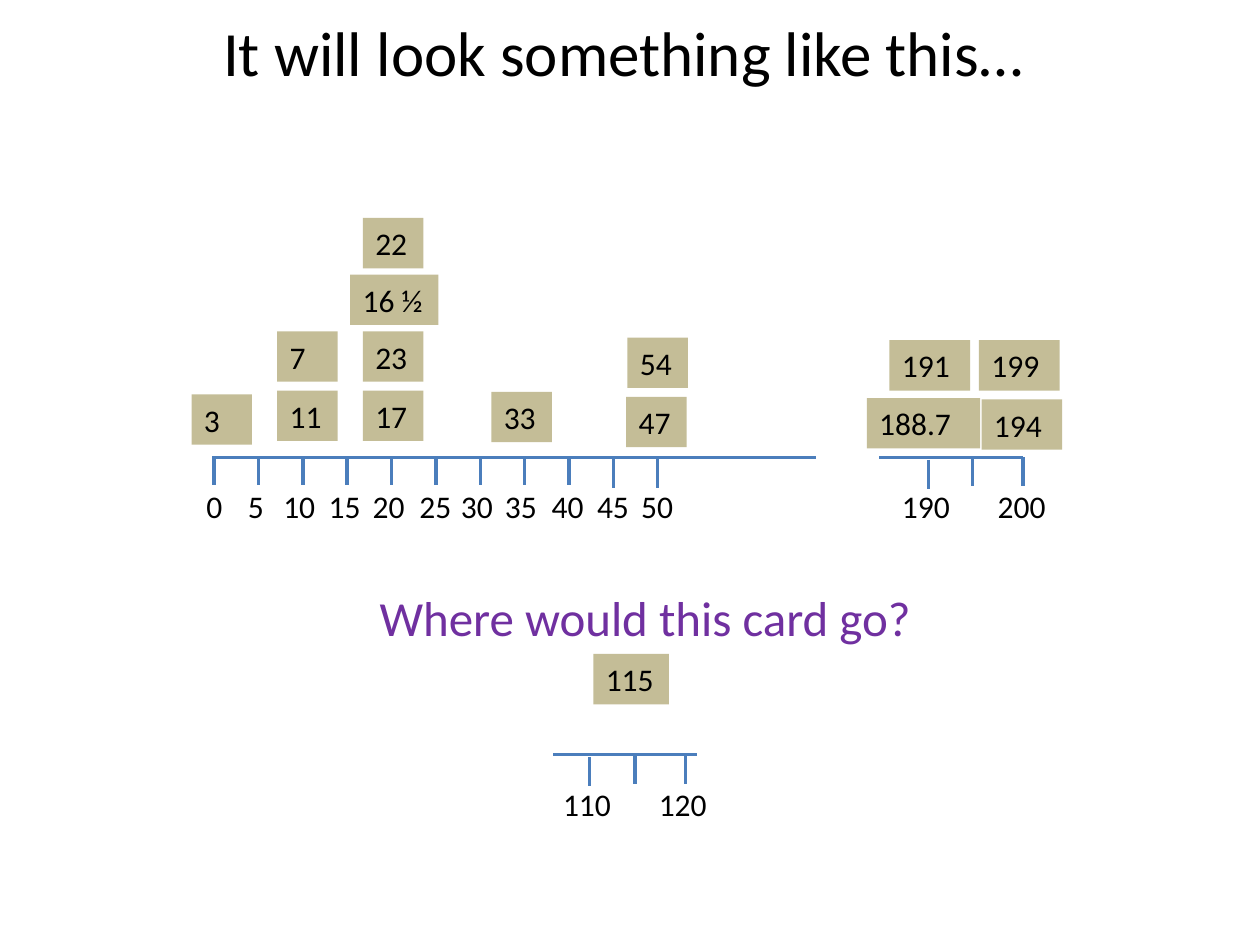
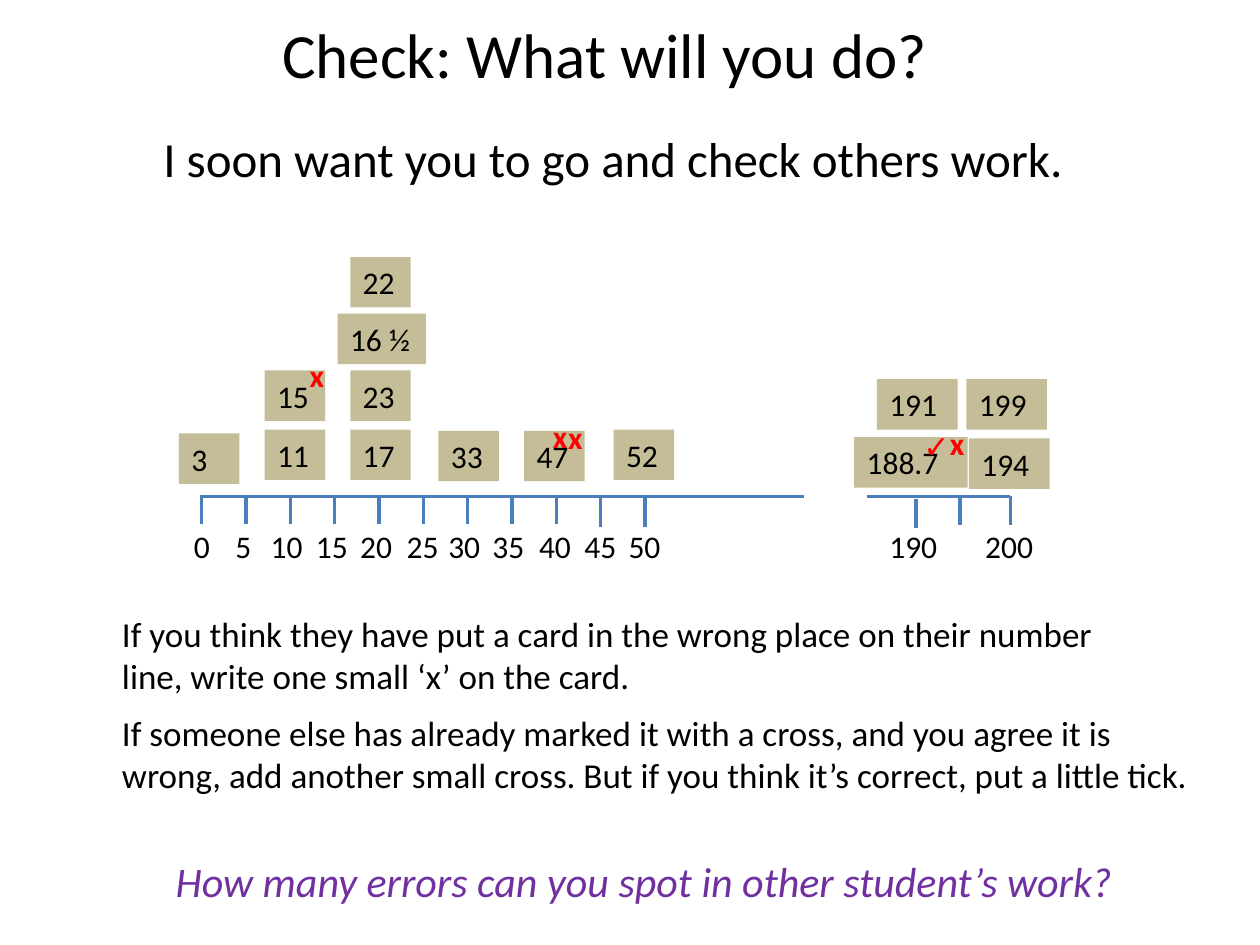
from lxml import etree
from pptx import Presentation
from pptx.dml.color import RGBColor
from pptx.enum.shapes import MSO_CONNECTOR, MSO_SHAPE
from pptx.enum.text import MSO_ANCHOR, MSO_AUTO_SIZE, PP_ALIGN
from pptx.oxml.ns import qn
from pptx.util import Inches, Pt

RECT = MSO_SHAPE.RECTANGLE
STRAIGHT = MSO_CONNECTOR.STRAIGHT
TOP = MSO_ANCHOR.TOP
GROW = MSO_AUTO_SIZE.SHAPE_TO_FIT_TEXT
LEFT, MID = PP_ALIGN.LEFT, PP_ALIGN.CENTER

BLACK, PURPLE, RED = "000000", "7030A0", "FF0000"
TAN, BLUE = "C4BD97", "4B7EBC"
ROW = 0.4  # height of a card or a label


def put(shape, text, at, size=18, color=BLACK, wrap=False, align=LEFT, **more):
    """Place a shape and write its text."""
    for side, val in zip(("left", "top", "width", "height"), at):
        setattr(shape, side, Inches(val))
    frame = shape.text_frame
    look = {"word_wrap": wrap, "auto_size": GROW, "vertical_anchor": TOP}
    for key, val in look.items():
        setattr(frame, key, val)
    para = frame.paragraphs[0]
    para.alignment = align
    run = para.add_run()
    run.text = text
    style = {"name": "Calibri", "size": Pt(size), **more}
    for key, val in style.items():
        setattr(run.font, key, val)
    run.font.color.rgb = RGBColor.from_string(color)


def rule(shapes, x1, y1, x2, y2):
    """Draw one plain blue line."""
    ends = [Inches(n) for n in (x1, y1, x2, y2)]
    line = shapes.add_connector(STRAIGHT, *ends)
    line.line.color.rgb = RGBColor.from_string(BLUE)
    line.line.width = Pt(2)
    etree.SubElement(line._element.spPr, qn("a:effectLst"))


# Cards on both slides: text, left, top, width
shared = [
    ("17", 2.88, 3.1, 0.48), ("23", 2.88, 2.63, 0.48),
    ("11", 2.2, 3.1, 0.48), ("3", 1.52, 3.13, 0.48),
    ("16 ½", 2.78, 2.18, 0.7), ("22", 2.88, 1.73, 0.48),
    ("188.7", 6.88, 3.16, 0.9), ("191", 7.06, 2.7, 0.64),
    ("194", 7.79, 3.17, 0.64), ("199", 7.77, 2.7, 0.64),
]

# Long number line: ticks at equal gaps, labels set by hand
ticks = [(1.7 + 3.52 * i / 10, 0.01 if i > 8 else -0.01) for i in range(11)]
spots = [1.54, 1.87, 2.15, 2.51, 2.86, 3.23, 3.56, 3.91, 4.28, 4.64, 4.99]
marks = [(str(5 * i), x, 0.33 if i < 2 else 0.46) for i, x in enumerate(spots)]
long = (1.69, 6.48, 3.63, ticks, marks)

# Short number lines
high = (6.98, 8.12, 3.63, [(8.12, 0), (7.72, 0), (7.37, 0.02)],
        [("200", 7.82, 0.59), ("190", 7.06, 0.59)])
gap = (4.39, 5.53, 5.99, [(5.44, 0), (5.04, 0), (4.68, 0.02)],
       [("120", 5.13, 0.59), ("110", 4.37, 0.59)])

# Each slide: title and its place, shift of the chart, own cards, number lines
pages = [
    ("It will look something like this…", (1.67, 0.06, 6.61, 0.71), 0, 0,
     [("33", 3.9, 3.11, 0.48), ("47", 4.97, 3.15, 0.48),
      ("7", 2.2, 2.63, 0.48), ("54", 4.98, 2.68, 0.48),
      ("115", 4.71, 5.19, 0.6)], [high, long, gap]),
    ("Check: What will you do?", (2.14, 0.07, 5.37, 0.71), -0.1, 0.31,
     [("33", 3.58, 3.11, 0.48), ("52", 4.97, 3.1, 0.48),
      ("15", 2.2, 2.63, 0.48), ("47", 4.26, 3.11, 0.48)], [high, long]),
]

prs = Presentation()
prs.slide_width, prs.slide_height = Inches(10), Inches(7.5)
slides = []

for title, place, dx, dy, own, axes in pages:
    slide = prs.slides.add_slide(prs.slide_layouts[5])
    slides.append(slide)
    shapes = slide.shapes
    put(shapes.title, title, place, 36)

    # Cards
    for text, x, y, w in shared + own:
        card = shapes.add_shape(RECT, 0, 0, 0, 0)
        card.shadow.inherit = False
        card.fill.solid()
        card.fill.fore_color.rgb = RGBColor.from_string(TAN)
        card.line.fill.background()
        put(card, text, (x + dx, y + dy, w, ROW), wrap=True)

    # Number lines
    for start, end, y, ticks, marks in axes:
        base = y + dy
        rule(shapes, start + dx, base, end + dx, base)
        for x, drop in ticks:
            rule(shapes, x + dx, base + drop, x + dx, base + drop + 0.23)
        for text, x, w in marks:
            label = shapes.add_textbox(0, 0, 0, 0)
            put(label, text, (x + dx, base + 0.19, w, ROW))

# Prompts and instructions
first, second = slides
big = {"size": 28, "align": MID}
body = {"size": 20, "wrap": True}
cross = {"color": RED, "bold": True}
notes = [
    (first, "Where would this card go?", (2.89, 4.61, 4.46, 0.57),
     {**big, "color": PURPLE}),
    (second, "I soon want you to go and check others work.",
     (0.9, 0.97, 7.93, 0.57), {**big, "wrap": True}),
    (second, "If you think they have put a card in the wrong place on their "
     "number line, write one small ‘x’ on the card.",
     (0.87, 4.81, 7.93, 0.77), body),
    (second, "How many errors can you spot in other student’s work?",
     (1.03, 6.74, 8.16, 0.5),
     {"size": 24, "align": MID, "wrap": True, "color": PURPLE, "italic": True}),
    (second, "If someone else has already marked it with a cross, and you "
     "agree it is wrong, add another small cross. But if you think it’s "
     "correct, put a little tick.", (0.87, 5.6, 8.66, 1.11), body),
]

# Crosses and a tick on the cards
for x, y in [(4.41, 3.27), (2.36, 2.78), (4.29, 3.26), (7.44, 3.32)]:
    notes.append((second, "x", (x, y, 0.32, ROW), cross))
notes.append((second, "✓", (7.23, 3.34, 0.4, ROW), {**cross, "name": "Arial"}))

for slide, text, at, style in notes:
    put(slide.shapes.add_textbox(0, 0, 0, 0), text, at, **style)

prs.save("out.pptx")
